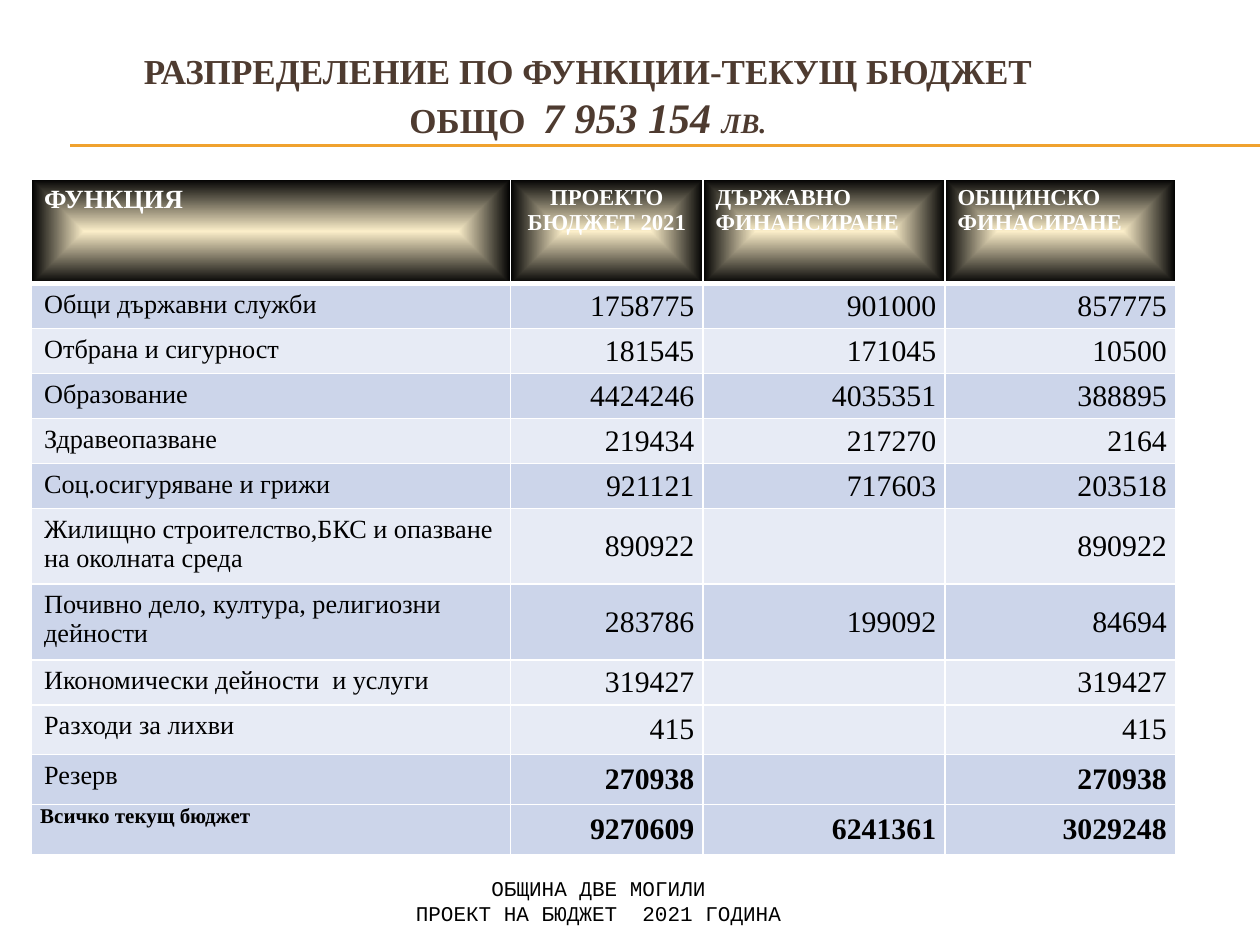
import pptx
import pptx.dml.color
import pptx.enum.shapes
import pptx.enum.text
import pptx.oxml
import pptx.oxml.ns
import pptx.util
from lxml import etree

Pt = pptx.util.Pt
ALIGN = pptx.enum.text.PP_ALIGN
ANCHOR = pptx.enum.text.MSO_ANCHOR
SERIF = "Times New Roman"
NAMESPACE = pptx.oxml.ns.nsdecls("a")

HEADERS = ["ФУНКЦИЯ", "ПРОЕКТО\nБЮДЖЕТ 2021", "ДЪРЖАВНО ФИНАНСИРАНЕ", "ОБЩИНСКО ФИНАСИРАНЕ"]
BUDGET = [
    ["Общи държавни служби", "1758775", "901000", "857775"],
    ["Отбрана и сигурност", "181545", "171045", "10500"],
    ["Образование", "4424246", "4035351", "388895"],
    ["Здравеопазване", "219434", "217270", "2164"],
    ["Соц.осигуряване и грижи", "921121", "717603", "203518"],
    ["Жилищно строителство,БКС и опазване на околната среда", "890922", "", "890922"],
    ["Почивно дело, култура, религиозни дейности", "283786", "199092", "84694"],
    ["Икономически дейности  и услуги", "319427", "", "319427"],
    ["Разходи за лихви", "415", "", "415"],
    ["Резерв", "270938", "", "270938"],
    ["Всичко текущ бюджет", "9270609", "6241361", "3029248"],
]
COLUMN_SHARES = [273.6, 110.2, 138.2, 131.8]
ROW_HEIGHTS = [60] + [25.7] * 5 + [40.2] * 2 + [25.7] + [28.5] * 3
LIGHT_ROWS = {2, 4, 6, 8, 9}
RESERVE_ROW = 10
TOTAL_ROW = 11


def color(value):
    return pptx.dml.color.RGBColor.from_string(value)


def style_font(font, size, value, bold=False, name=SERIF):
    font.name = name
    font.size = Pt(size)
    font.bold = bold
    font.color.rgb = color(value)


def add_text_frame(slide, box, anchor, top_inset=0):
    frame = slide.shapes.add_textbox(*map(Pt, box)).text_frame
    frame.word_wrap = True
    frame.vertical_anchor = anchor
    frame.margin_left = frame.margin_right = frame.margin_bottom = 0
    frame.margin_top = Pt(top_inset)
    return frame


def add_rules(slide, box):
    left, top, width, height = box
    for y in (top, top + height):
        rule = slide.shapes.add_connector(
            pptx.enum.shapes.MSO_CONNECTOR.STRAIGHT, Pt(left), Pt(y), Pt(left + width), Pt(y))
        rule.line.color.rgb = color("F0A22E")
        rule.line.width = Pt(0.75)
        etree.SubElement(rule._element.spPr, pptx.oxml.ns.qn("a:effectLst"))


def add_title(slide, box):
    paragraph = add_text_frame(slide, box, ANCHOR.MIDDLE, 3.6).paragraphs[0]
    paragraph.alignment = ALIGN.CENTER
    parts = [("РАЗПРЕДЕЛЕНИЕ ПО ФУНКЦИИ-ТЕКУЩ БЮДЖЕТ", 20, False), ("ОБЩО  ", 20, False),
             ("7 953 154 ", 24, True), ("ЛВ.", 16, True)]
    for index, (text, size, italic) in enumerate(parts):
        if index == 1:
            paragraph.add_line_break()
        run = paragraph.add_run()
        run.text = text
        style_font(run.font, size, "4E3B30", True)
        run.font.italic = italic


def add_footer(slide, box):
    frame = add_text_frame(slide, box, ANCHOR.BOTTOM)
    frame.text = "ОБЩИНА ДВЕ МОГИЛИ\nПРОЕКТ НА БЮДЖЕТ  2021 ГОДИНА"
    for paragraph in frame.paragraphs:
        paragraph.alignment = ALIGN.CENTER
        style_font(paragraph.font, 12, "000000", name="Courier New")


def set_borders(cell, row):
    widths = {"L": 1, "R": 1, "T": 3 if row == 1 else 1, "B": 3 if row == 0 else 1}
    for side, width in widths.items():
        cell._tc.get_or_add_tcPr().append(pptx.oxml.parse_xml(
            f'<a:ln{side} {NAMESPACE} w="{Pt(width)}"><a:solidFill>'
            f'<a:srgbClr val="FFFFFF"/></a:solidFill></a:ln{side}>'))


def fill_header(cell):
    cell._tc.get_or_add_tcPr().append(pptx.oxml.parse_xml(
        f'<a:gradFill {NAMESPACE}><a:gsLst>'
        '<a:gs pos="0"><a:srgbClr val="FBEEC9"/></a:gs>'
        '<a:gs pos="100000"><a:srgbClr val="000000"/></a:gs></a:gsLst>'
        '<a:path path="shape"><a:fillToRect l="50000" t="50000" r="50000" b="50000"/></a:path>'
        '</a:gradFill>'))


def style_cell(cell, row, column):
    is_number = row > 0 and column > 0 and cell.text != ""
    alignment, size = ALIGN.LEFT, 15
    if row == 0 and column > 0:
        size = 13
        alignment = ALIGN.CENTER if column == 1 else ALIGN.LEFT
    elif is_number:
        alignment, size = ALIGN.RIGHT, 17
        cell.vertical_anchor = ANCHOR.MIDDLE
    elif row == TOTAL_ROW:
        alignment, size = ALIGN.JUSTIFY, 12
    if is_number or row == TOTAL_ROW:
        cell.margin_left = cell.margin_right = Pt(5)
        cell.margin_top = cell.margin_bottom = 0
    bold = row in (0, TOTAL_ROW) or (row == RESERVE_ROW and is_number)
    for paragraph in cell.text_frame.paragraphs:
        paragraph.alignment = alignment
        style_font(paragraph.font, size, "000000" if row else "FFFFFF", bold)


def add_budget_table(slide, box):
    rows = [HEADERS] + BUDGET
    table = slide.shapes.add_table(len(rows), len(HEADERS), *map(Pt, box)).table
    for column, share in zip(table.columns, COLUMN_SHARES):
        column.width = Pt(round(box[2] * share / sum(COLUMN_SHARES), 2))
    for row, height in zip(table.rows, ROW_HEIGHTS):
        row.height = Pt(height)
    for row, texts in enumerate(rows):
        for column, text in enumerate(texts):
            cell = table.cell(row, column)
            cell.text = text
            style_cell(cell, row, column)
            set_borders(cell, row)
            if row == 0:
                fill_header(cell)
            else:
                cell.fill.solid()
                cell.fill.fore_color.rgb = color("E7EBF5" if row in LIGHT_ROWS else "CCD5EA")


def main():
    presentation = pptx.Presentation()
    presentation.slide_width = Pt(720)
    presentation.slide_height = Pt(540)
    slide = presentation.slides.add_slide(presentation.slide_layouts[6])
    add_rules(slide, (40.3, 82.8, 679.7, 0.7))
    add_title(slide, (48, 24, 576, 58))
    add_footer(slide, (210, 500.4, 264, 28.8))
    add_budget_table(slide, (18, 102.2, 653.8, 380.1))
    presentation.save("out.pptx")


if __name__ == "__main__":
    main()
